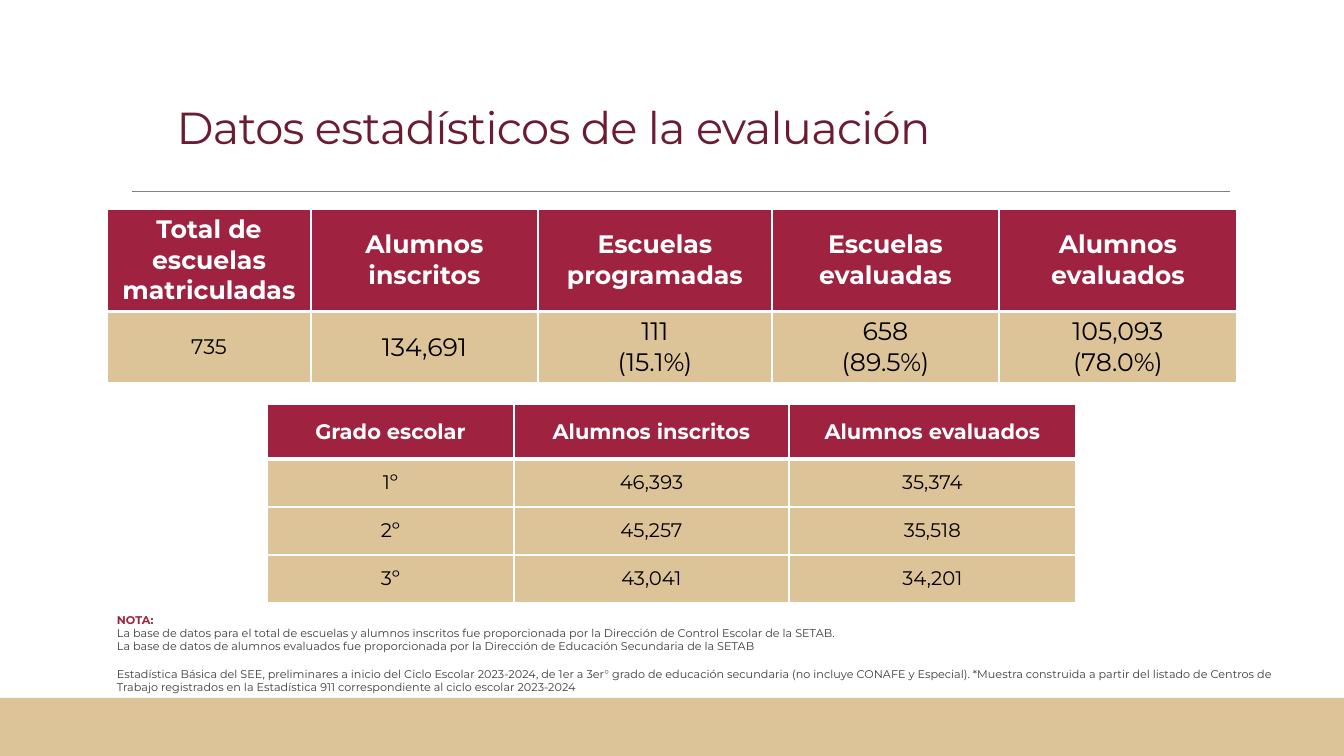
from lxml import etree
from pptx import Presentation
from pptx import util as u
from pptx.dml.color import RGBColor
from pptx.enum import shapes, text
from pptx.oxml import ns

PX = 914400 / 100.8
WINE, SAND, WHITE, BLACK = "9F2240", "DDC398", "FFFFFF", "000000"
PLUM, GRAY, CHARCOAL = "6B1C32", "808080", "3C3C3B"

SCHOOLS = [
    ["Total de escuelas matriculadas", "Alumnos inscritos", "Escuelas programadas",
     "Escuelas evaluadas", "Alumnos evaluados"],
    ["735", "134,691", "111\n(15.1%)", "658\n(89.5%)", "105,093\n(78.0%)"],
]
GRADES = [
    ["Grado escolar", "Alumnos inscritos", "Alumnos evaluados"],
    ["1º", "46,393", "35,374"],
    ["2º", "45,257", "35,518"],
    ["3º", "43,041", "34,201"],
]
NOTES = [
    "La base de datos para el total de escuelas y alumnos inscritos fue proporcionada por la "
    "Dirección de Control Escolar de la SETAB.",
    "La base de datos de alumnos evaluados fue proporcionada por la Dirección de Educación "
    "Secundaria de la SETAB",
    "Estadística Básica del SEE, preliminares a inicio del Ciclo Escolar 2023-2024, de 1er a 3er° "
    "grado de educación secundaria (no incluye CONAFE y Especial). *Muestra construida a partir "
    "del listado de Centros de Trabajo registrados en la Estadística 911 correspondiente al ciclo "
    "escolar 2023-2024",
]


def px(n):
    return u.Emu(round(n * PX))


def rgb(color):
    return RGBColor.from_string(color)


def add_run(p, content, size, color, bold=False):
    r = p.add_run()
    r.text = content
    for name, value in {"name": "Montserrat", "size": u.Pt(size), "bold": bold}.items():
        setattr(r.font, name, value)
    r.font.color.rgb = rgb(color)
    return r


def add_textbox(slide, box, anchor):
    tf = slide.shapes.add_textbox(*map(px, box)).text_frame
    for name, value in {"word_wrap": True, "vertical_anchor": anchor}.items():
        setattr(tf, name, value)
    return tf


def add_title(slide, box, content):
    p = add_textbox(slide, box, text.MSO_ANCHOR.MIDDLE).paragraphs[0]
    for name, value in {"alignment": text.PP_ALIGN.CENTER, "line_spacing": 0.85}.items():
        setattr(p, name, value)
    r = add_run(p, content, 32, PLUM)
    r.font._element.set("spc", "-50")


def add_notes(slide, box):
    tf = add_textbox(slide, box, text.MSO_ANCHOR.TOP)
    add_run(tf.paragraphs[0], "NOTA:", 8, WINE, True)
    for note in NOTES:
        p = tf.add_paragraph()
        add_run(p, note, 8, CHARCOAL)
    p.space_before = u.Pt(9.75)


def add_band(slide, box):
    sp = slide.shapes.add_shape(shapes.MSO_SHAPE.RECTANGLE, *map(px, box))
    sp.shadow.inherit = False
    sp.fill.solid()
    sp.fill.fore_color.rgb = rgb(SAND)
    sp.line.fill.background()


def add_rule(slide, x1, x2, y):
    ln = slide.shapes.add_connector(shapes.MSO_CONNECTOR.STRAIGHT, px(x1), px(y), px(x2), px(y))
    ln.line.color.rgb = rgb(GRAY)
    ln.line.width = u.Pt(0.5)
    etree.SubElement(ln._element.spPr, ns.qn("a:effectLst"))


def set_borders(cell, widths):
    tc_pr = cell._tc.get_or_add_tcPr()
    for side, width in widths.items():
        ln = etree.SubElement(tc_pr, ns.qn(f"a:ln{side}"), w=str(u.Pt(width)))
        fill = etree.SubElement(ln, ns.qn("a:solidFill"))
        etree.SubElement(fill, ns.qn("a:srgbClr"), val=WHITE)


def fill_cell(cell, content, row, size):
    header = row == 0
    set_borders(cell, {"L": 1, "R": 1, "T": 3 if row == 1 else 1, "B": 3 if header else 1})
    cell.fill.solid()
    cell.fill.fore_color.rgb = rgb(WINE if header else SAND)
    cell.vertical_anchor = text.MSO_ANCHOR.MIDDLE
    tf = cell.text_frame
    for i, line in enumerate(content.split("\n")):
        p = tf.add_paragraph() if i else tf.paragraphs[0]
        p.alignment = text.PP_ALIGN.CENTER
        add_run(p, line, size, WHITE if header else BLACK, header)


def add_grid(slide, left, top, widths, heights, rows, size_at):
    box = (left, top, sum(widths), sum(heights))
    table = slide.shapes.add_table(len(rows), len(widths), *map(px, box)).table
    table.horz_banding = False
    for column, width in zip(table.columns, widths):
        column.width = px(width)
    for row, height in zip(table.rows, heights):
        row.height = px(height)
    for i, values in enumerate(rows):
        for j, value in enumerate(values):
            fill_cell(table.cell(i, j), value, i, size_at(i, j))


def main():
    prs = Presentation()
    prs.slide_width, prs.slide_height = px(1344), px(756)
    slide = prs.slides.add_slide(prs.slide_layouts[6])
    add_rule(slide, 132, 1230, 191)
    add_band(slide, (0, 698, 1344, 58))
    add_grid(slide, 107, 209, [204, 227, 234, 227, 238], [83, 60], SCHOOLS,
             lambda i, j: 15 if (i, j) == (1, 0) else 18)
    add_grid(slide, 267, 404, [247, 275, 287], [55, 48, 48, 48], GRADES,
             lambda i, j: 14 if i else 15)
    add_notes(slide, (107, 608, 1186, 92))
    add_title(slide, (121, 77, 865, 107), "Datos estadísticos de la evaluación")
    prs.save("out.pptx")


if __name__ == "__main__":
    main()
